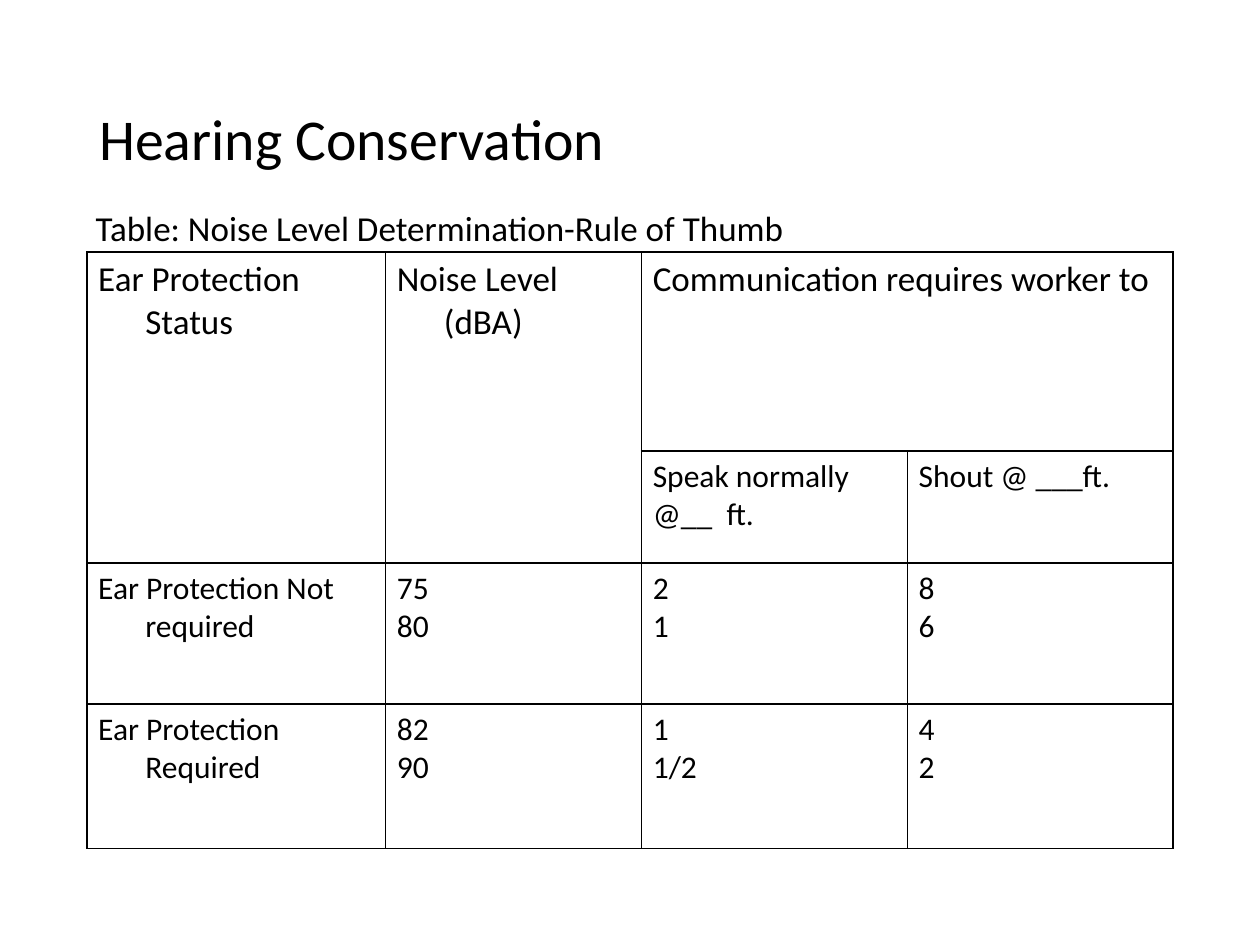
from typing import NamedTuple

from lxml.etree import SubElement
from pptx import Presentation
from pptx.dml.color import RGBColor
from pptx.enum.text import MSO_ANCHOR
from pptx.oxml.ns import qn
from pptx.util import Cm, Pt

COLORS = {"text": "000000", "border": "000000"}
FONT = "Calibri"
HANGING = Cm(0.95)
COLUMN_WIDTHS = (6.02, 5.16, 5.36, 5.36)
ROW_HEIGHTS = (4.01, 2.26, 2.84, 2.92)


class Label(NamedTuple):
    text: str
    left: float
    top: float
    width: float
    height: float
    size: int
    anchor: MSO_ANCHOR = MSO_ANCHOR.TOP
    line_spacing: float = 1.0


class Entry(NamedTuple):
    row: int
    column: int
    lines: tuple[str, ...]
    size: int = 18
    hanging: bool = True
    rows: int = 1
    columns: int = 1


LABELS = (
    Label("Hearing Conservation", 1.75, 1.02, 21.9, 3.68, 33, MSO_ANCHOR.MIDDLE, 0.9),
    Label("Table: Noise Level Determination-Rule of Thumb", 1.68, 4.04, 21.16, 1.12, 20),
)

HEADINGS = (
    Entry(0, 0, ("Ear Protection Status",), 20, rows=2),
    Entry(0, 1, ("Noise Level (dBA)",), 20, rows=2),
    Entry(0, 2, ("Communication requires worker to",), 20, columns=2),
    Entry(1, 2, ("Speak normally @__  ft.",), hanging=False),
    Entry(1, 3, ("Shout @ ___ft.",), hanging=False),
)

NOISE_LEVELS = (
    (("Ear Protection Not required",), ("75", "80"), ("2", "1"), ("8", "6")),
    (("Ear Protection Required",), ("82", "90"), ("1", "1/2"), ("4", "2")),
)


def style_font(paragraph, size: int) -> None:
    paragraph.font.name = FONT
    paragraph.font.size = Pt(size)
    paragraph.font.bold = False
    paragraph.font.color.rgb = RGBColor.from_string(COLORS["text"])


def add_label(slide, label: Label) -> None:
    box = slide.shapes.add_textbox(
        Cm(label.left), Cm(label.top), Cm(label.width), Cm(label.height)
    )
    frame = box.text_frame
    frame.word_wrap = True
    frame.vertical_anchor = label.anchor
    paragraph = frame.paragraphs[0]
    paragraph.text = label.text
    paragraph.line_spacing = label.line_spacing
    style_font(paragraph, label.size)


def style_cell(cell) -> None:
    """Give the cell a thin border on every side and no fill."""
    properties = cell._tc.get_or_add_tcPr()
    for side in ("a:lnL", "a:lnR", "a:lnT", "a:lnB"):
        line = SubElement(properties, qn(side), w=str(Pt(1)))
        fill = SubElement(line, qn("a:solidFill"))
        SubElement(fill, qn("a:srgbClr"), val=COLORS["border"])
    cell.fill.background()
    cell.margin_left = cell.margin_right = Cm(0.23)
    cell.margin_top = cell.margin_bottom = Cm(0.13)


def fill_entry(table, entry: Entry) -> None:
    cell = table.cell(entry.row, entry.column)
    if entry.rows > 1 or entry.columns > 1:
        cell.merge(
            table.cell(entry.row + entry.rows - 1, entry.column + entry.columns - 1)
        )
    cell.text_frame.text = "\n".join(entry.lines)
    for paragraph in cell.text_frame.paragraphs:
        style_font(paragraph, entry.size)
        if entry.hanging:
            properties = paragraph._p.get_or_add_pPr()
            properties.set("marL", str(HANGING))
            properties.set("indent", str(-HANGING))


def add_noise_table(slide) -> None:
    table = slide.shapes.add_table(
        len(ROW_HEIGHTS), len(COLUMN_WIDTHS),
        Cm(1.75), Cm(5.08), Cm(sum(COLUMN_WIDTHS)), Cm(sum(ROW_HEIGHTS)),
    ).table
    table.first_row = table.horz_banding = False
    for column, width in zip(table.columns, COLUMN_WIDTHS):
        column.width = Cm(width)
    for row, height in zip(table.rows, ROW_HEIGHTS):
        row.height = Cm(height)
    for cell in table.iter_cells():
        style_cell(cell)

    # Headings over two rows, then one row per protection status
    for heading in HEADINGS:
        fill_entry(table, heading)
    for row, levels in enumerate(NOISE_LEVELS, start=2):
        for column, lines in enumerate(levels):
            fill_entry(table, Entry(row, column, lines))


def main() -> None:
    presentation = Presentation()
    presentation.slide_width = Cm(25.4)
    presentation.slide_height = Cm(19.05)
    slide = presentation.slides.add_slide(presentation.slide_layouts[6])

    # Title, table and caption, from back to front
    title, caption = LABELS
    add_label(slide, title)
    add_noise_table(slide)
    add_label(slide, caption)

    presentation.save("out.pptx")


if __name__ == "__main__":
    main()
